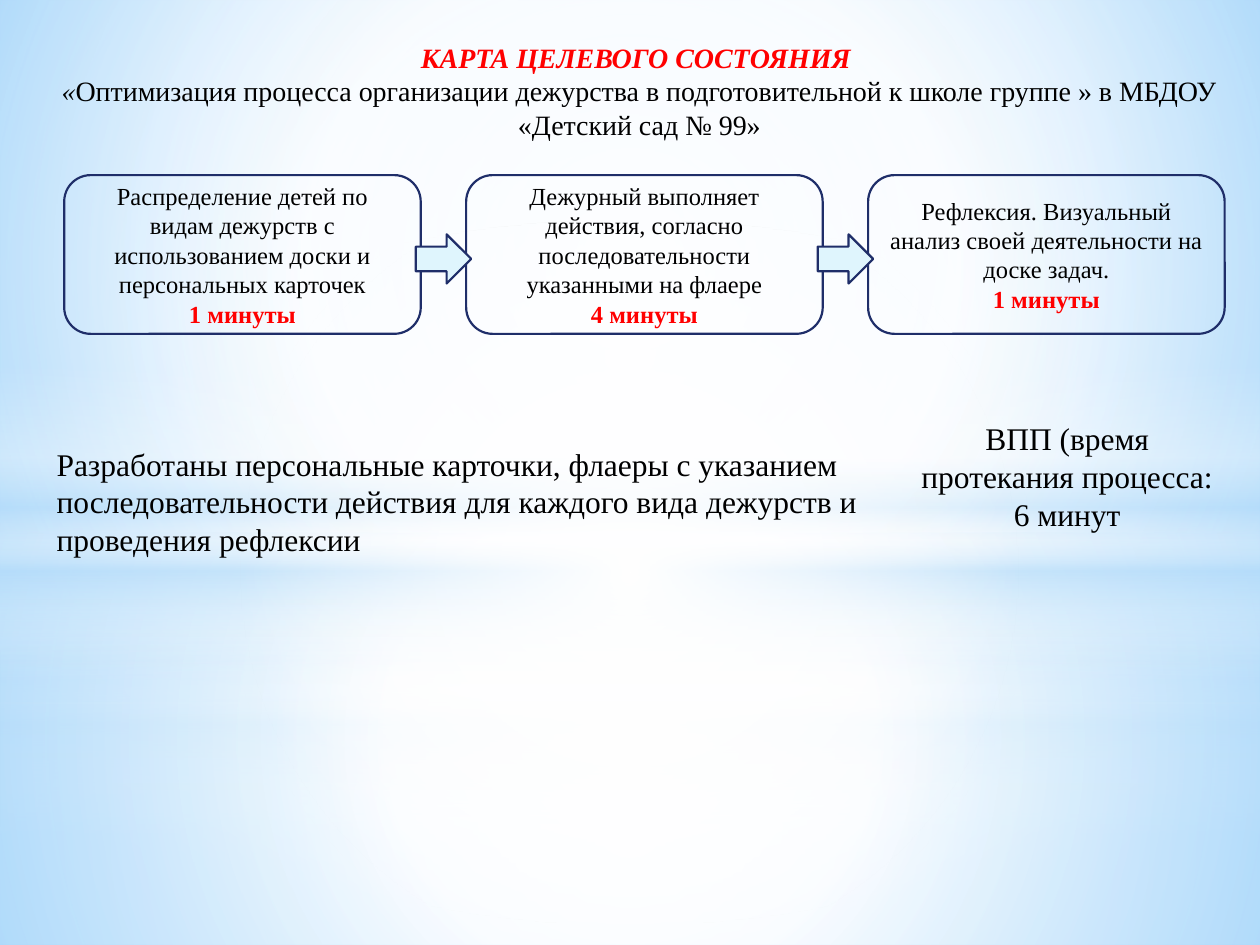
import pptx
import pptx.util
import pptx.dml.color
import pptx.enum.shapes
import pptx.enum.text
import pptx.oxml
import pptx.oxml.ns
from dataclasses import dataclass

Inches, Pt = pptx.util.Inches, pptx.util.Pt
Shape = pptx.enum.shapes.MSO_SHAPE
Align = pptx.enum.text.PP_ALIGN
Anchor = pptx.enum.text.MSO_ANCHOR


@dataclass(frozen=True)
class Theme:
    font: str = "Times New Roman"
    ink: str = "000000"
    red: str = "FF0000"
    edge: str = "1F2E69"
    arrow: str = "DFF5FD"
    white: str = "FFFFFF"
    sky: str = "B4DCFA"
    glow: str = "9ED5FF"
    rim: str = "5BB9FF"
    head: int = 16
    step: int = 14
    note: int = 18
    line: float = 1.25


THEME = Theme()
STEPS = [
    ("Распределение детей по видам дежурств с использованием доски и "
     "персональных карточек", "1 минуты"),
    ("Дежурный выполняет действия, согласно последовательности "
     "указанными на флаере", "4 минуты"),
    ("Рефлексия. Визуальный анализ своей деятельности на доске задач.",
     "1 минуты"),
]


def color(code):
    return pptx.dml.color.RGBColor.from_string(code)


def blend(fill, root, stops, focus=None):
    """Fill with (position, colour, opacity) stops: round about focus, or down."""
    fill.gradient()
    old = root.find(".//" + pptx.oxml.ns.qn("a:gradFill"))
    marks = "".join(
        f'<a:gs pos="{pos * 1000}"><a:srgbClr val="{code}">'
        f'<a:alpha val="{alpha * 1000}"/></a:srgbClr></a:gs>'
        for pos, code, alpha in stops)
    if focus:
        sides = " ".join(f'{side}="{part * 1000}"'
                         for side, part in zip("ltrb", focus))
        way = f'<a:path path="circle"><a:fillToRect {sides}/></a:path>'
    else:
        way = '<a:lin ang="5400000" scaled="0"/>'
    new = pptx.oxml.parse_xml(
        f'<a:gradFill {pptx.oxml.ns.nsdecls("a")} rotWithShape="1">'
        f'<a:gsLst>{marks}</a:gsLst>{way}</a:gradFill>')
    old.getparent().replace(old, new)


def add_form(slide, kind, box):
    form = slide.shapes.add_shape(kind, *map(Inches, box))
    form.shadow.inherit = False
    form.fill.background()
    form.line.fill.background()
    return form


def outline(form):
    form.line.color.rgb = color(THEME.edge)
    form.line.width = Pt(THEME.line)


def write(frame, paras, size, align=Align.CENTER):
    """Each paragraph is a list of (text, colour, bold, italic) runs."""
    frame.word_wrap = True
    for num, runs in enumerate(paras):
        para = frame.add_paragraph() if num else frame.paragraphs[0]
        para.alignment = align
        for text, code, bold, slant in runs:
            run = para.add_run()
            run.text = text
            run.font.name = THEME.font
            run.font.size = Pt(size)
            run.font.bold = bold
            run.font.italic = slant
            run.font.color.rgb = color(code)


def add_text(slide, box, paras, size, align=Align.CENTER):
    frame = slide.shapes.add_textbox(*map(Inches, box)).text_frame
    write(frame, paras, size, align)


def add_veil(slide, box, split, band, gain, reach):
    """Two hazy halves meeting at split, a light band and a round glow."""
    left, top, width, height = box
    white, sky = THEME.white, THEME.sky
    mid = (50, 50, 50, 50)
    low = [(0, white, 91 + gain), (37, white, 76 + gain), (100, sky, 79 + gain)]
    high = [(0, white, 89 + gain), (48, white, 62 + gain), (100, sky, 79 + gain)]
    beam = [(0, white, 0), (29, white, 30), (45, sky, 40),
            (55, white, 26), (65, sky, 60), (100, white, 0)]
    halo = [(0, white, 100), (reach, white, 0)]
    for kind, y, tall, stops, focus in [
            (Shape.RECTANGLE, split, height - split, low, mid),
            (Shape.RECTANGLE, 0, split, high, mid),
            (Shape.RECTANGLE, band, 2.5, beam, None),
            (Shape.OVAL, 1.75, 5.58, halo, mid)]:
        form = add_form(slide, kind, (left, top + y, width, tall))
        blend(form.fill, form._element, stops, focus)


def add_back(slide, box):
    blend(slide.background.fill, slide.element,
          [(0, THEME.glow, 100), (60, THEME.white, 100), (100, THEME.rim, 100)],
          (20, 10, 20, 60))
    add_veil(slide, box, 5.58, 4.12, 0, 56)
    add_veil(slide, box, 4.23, 2.9, 1, 54)


def add_title(slide, box):
    add_text(slide, box, [
        [("КАРТА ЦЕЛЕВОГО СОСТОЯНИЯ ", THEME.red, True, True)],
        [("«", THEME.ink, False, True),
         ("Оптимизация процесса организации дежурства в подготовительной "
          "к школе группе » в МБДОУ «Детский сад № 99»",
          THEME.ink, False, False)],
    ], THEME.head)


def add_flow(slide, box):
    """Equal step boxes across the width, an arrow over each gap."""
    left, top, width, height = box
    wide, long, tall = 2.83, 0.44, 0.39
    pitch = (width - wide) / (len(STEPS) - 1)
    for num, (text, time) in enumerate(STEPS):
        x = left + num * pitch
        form = add_form(slide, Shape.FLOWCHART_ALTERNATE_PROCESS,
                        (x, top, wide, height))
        outline(form)
        form.text_frame.vertical_anchor = Anchor.MIDDLE
        write(form.text_frame, [[(text, THEME.ink, False, False)],
                                [(time, THEME.red, True, False)]], THEME.step)
    for num in range(len(STEPS) - 1):
        x = left + num * pitch + (wide + pitch - long) / 2
        arrow = add_form(slide, Shape.RIGHT_ARROW,
                         (x, top + 0.47, long, tall))
        arrow.fill.solid()
        arrow.fill.fore_color.rgb = color(THEME.arrow)
        outline(arrow)


def add_notes(slide, box):
    left, top, width, height = box
    add_text(slide, (left + width - 2.68, top, 2.68, 1.01), [
        [("ВПП (время протекания процесса: 6 минут", THEME.ink, False, False)],
    ], THEME.note)
    add_text(slide, (left, top + 0.2, 6.58, height - 0.2), [
        [("Разработаны персональные карточки, флаеры с указанием "
          "последовательности действия для каждого вида дежурств и "
          "проведения рефлексии", THEME.ink, False, False)],
    ], THEME.note, Align.LEFT)


def main():
    deck = pptx.Presentation()
    deck.slide_width, deck.slide_height = Inches(10), Inches(7.5)
    slide = deck.slides.add_slide(deck.slide_layouts[6])
    add_back(slide, (0, 0, 10, 7.5))
    add_title(slide, (0.35, 0.27, 9.45, 0.91))
    add_flow(slide, (0.51, 1.39, 9.21, 1.26))
    add_notes(slide, (0.35, 3.28, 9.46, 1.82))
    deck.save("out.pptx")


if __name__ == "__main__":
    main()
